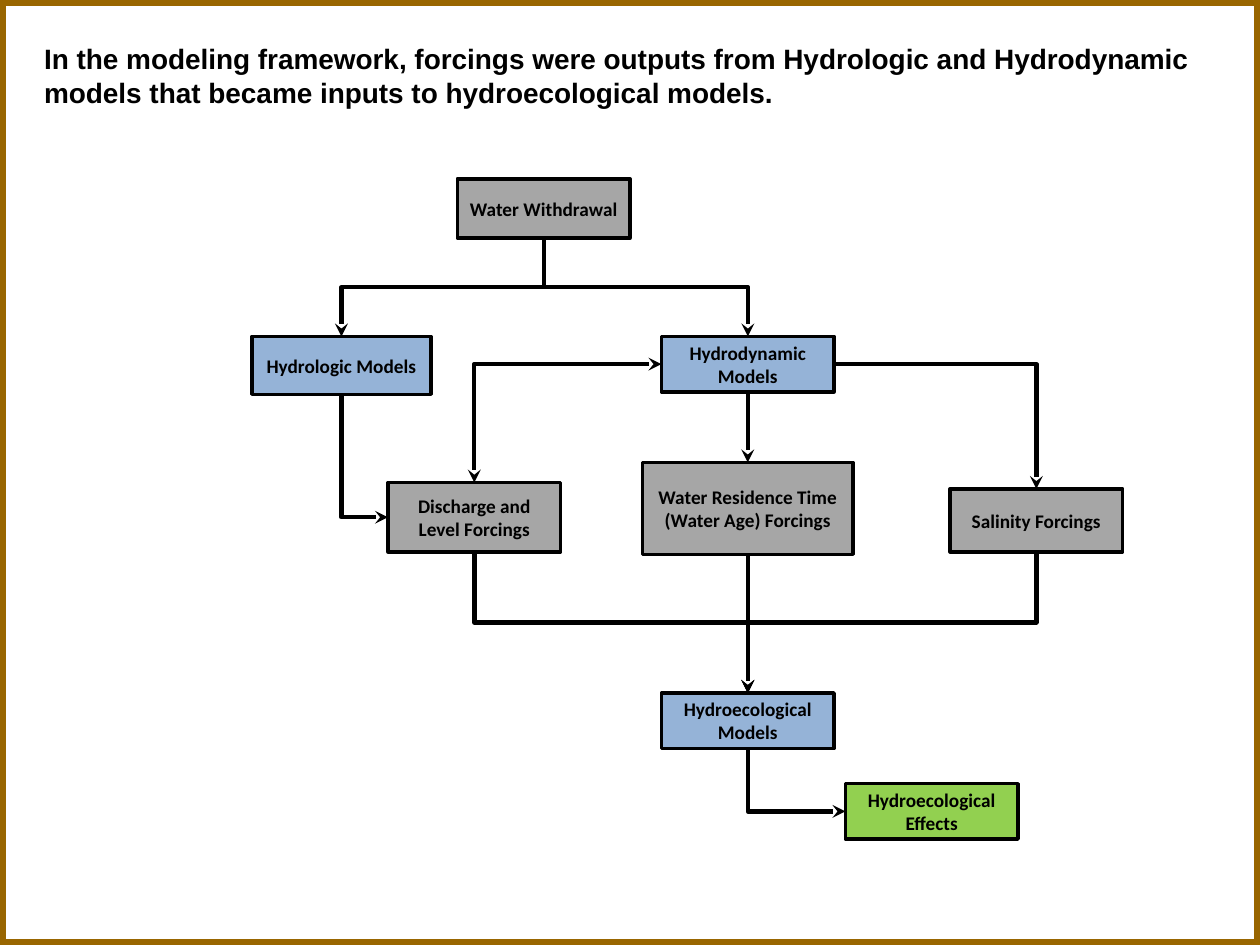
from dataclasses import dataclass

import lxml.etree
import pptx
import pptx.dml.color
import pptx.enum.shapes
import pptx.enum.text
import pptx.oxml.ns
import pptx.shapes.autoshape
import pptx.shapes.connector
import pptx.slide
import pptx.text.text
import pptx.util

Inches = pptx.util.Inches
Connectors = pptx.enum.shapes.MSO_CONNECTOR
Align = pptx.enum.text.PP_ALIGN
Anchor = pptx.enum.text.MSO_ANCHOR
qn = pptx.oxml.ns.qn

COLORS = {
    "ink": "000000",
    "forcing": "A6A6A6",
    "model": "95B3D7",
    "effect": "92D050",
    "frame": "996600",
}
TOP, LEFT, BOTTOM, RIGHT = range(4)


@dataclass(frozen=True)
class Box:
    text: str
    color: str
    left: float
    top: float
    width: float = 1.37
    height: float = 0.44

    def side(self, index: int) -> tuple[float, float]:
        across, down = ((0.5, 0), (0, 0.5), (0.5, 1), (1, 0.5))[index]
        return self.left + across * self.width, self.top + down * self.height


@dataclass(frozen=True)
class Flow:
    source: str
    exit: int
    target: str
    entry: int
    both_ways: bool = False


BOXES = {
    "withdrawal": Box("Water Withdrawal", "forcing", 3.63, 1.42, height=0.47),
    "hydrologic": Box("Hydrologic Models", "model", 2, 2.67, 1.42, 0.46),
    "hydrodynamic": Box("Hydrodynamic Models", "model", 5.25, 2.67),
    "discharge": Box("Discharge and Level Forcings", "forcing", 3.08, 3.83, height=0.55),
    "residence": Box("Water Residence Time (Water Age) Forcings", "forcing", 5.1, 3.67, 1.67, 0.73),
    "salinity": Box("Salinity Forcings", "forcing", 7.54, 3.88, height=0.5),
    "hydroecological": Box("Hydroecological Models", "model", 5.25, 5.5),
    "effects": Box("Hydroecological Effects", "effect", 6.71, 6.22),
}
FLOWS = [
    Flow("withdrawal", BOTTOM, "hydrologic", TOP),
    Flow("withdrawal", BOTTOM, "hydrodynamic", TOP),
    Flow("hydrologic", BOTTOM, "discharge", LEFT),
    Flow("hydrodynamic", LEFT, "discharge", TOP, both_ways=True),
    Flow("hydrodynamic", RIGHT, "salinity", TOP),
    Flow("discharge", BOTTOM, "hydroecological", TOP),
    Flow("salinity", BOTTOM, "hydroecological", TOP),
    Flow("hydroecological", BOTTOM, "effects", LEFT),
]
STRAIGHT_FLOWS = [
    Flow("hydrodynamic", BOTTOM, "residence", TOP),
    Flow("residence", BOTTOM, "hydroecological", TOP),
]


def rgb(name: str) -> pptx.dml.color.RGBColor:
    return pptx.dml.color.RGBColor.from_string(COLORS[name])


def write(frame: pptx.text.text.TextFrame, text: str, *, font: str, size: float,
          align: Align, anchor: Anchor, inset: float) -> None:
    frame.word_wrap = True
    frame.auto_size = pptx.enum.text.MSO_AUTO_SIZE.NONE
    frame.vertical_anchor = anchor
    frame.margin_left = frame.margin_right = Inches(inset)
    frame.margin_top = frame.margin_bottom = Inches(0.05)
    paragraph = frame.paragraphs[0]
    paragraph.alignment = align
    run = paragraph.add_run()
    run.text = text
    run.font.name = font
    run.font.size = pptx.util.Pt(size)
    run.font.bold = True
    run.font.color.rgb = rgb("ink")


def outlined_rectangle(slide: pptx.slide.Slide, left: float, top: float, width: float,
                       height: float, color: str,
                       weight: float) -> pptx.shapes.autoshape.Shape:
    rectangle = slide.shapes.add_shape(
        pptx.enum.shapes.MSO_SHAPE.RECTANGLE,
        Inches(left), Inches(top), Inches(width), Inches(height))
    rectangle.shadow.inherit = False
    rectangle.fill.background()
    rectangle.line.color.rgb = rgb(color)
    rectangle.line.width = pptx.util.Pt(weight)
    return rectangle


def draw_box(slide: pptx.slide.Slide, box: Box) -> pptx.shapes.autoshape.Shape:
    rectangle = outlined_rectangle(slide, box.left, box.top, box.width, box.height, "ink", 2)
    rectangle.fill.solid()
    rectangle.fill.fore_color.rgb = rgb(box.color)
    write(rectangle.text_frame, box.text, font="Calibri", size=11,
          align=Align.CENTER, anchor=Anchor.MIDDLE, inset=0.08)
    return rectangle


def draw_arrow(slide: pptx.slide.Slide, flow: Flow, kind: Connectors,
               begin: tuple[float, float],
               end: tuple[float, float]) -> pptx.shapes.connector.Connector:
    arrow = slide.shapes.add_connector(kind, *map(Inches, begin + end))
    arrow.line.color.rgb = rgb("ink")
    arrow.line.width = pptx.util.Pt(2.5)
    properties = arrow._element.spPr
    for tip in ("a:headEnd", "a:tailEnd") if flow.both_ways else ("a:tailEnd",):
        lxml.etree.SubElement(properties.find(qn("a:ln")), qn(tip), type="stealth")
    lxml.etree.SubElement(properties, qn("a:effectLst"))
    return arrow


def draw_elbow(slide: pptx.slide.Slide, flow: Flow) -> None:
    begin = BOXES[flow.source].side(flow.exit)
    end = BOXES[flow.target].side(flow.entry)
    downward = flow.exit == BOTTOM
    rightward = end[0] > begin[0]
    if downward:
        middle_x, middle_y = (begin[0] + end[0]) / 2, (begin[1] + end[1]) / 2
        half_run = (end[1] - begin[1]) / 2 * (-1 if rightward else 1)
        half_rise = abs(end[0] - begin[0]) / 2
        begin = middle_x - half_run, middle_y - half_rise
        end = middle_x + half_run, middle_y + half_rise
    arrow = draw_arrow(slide, flow, Connectors.ELBOW, begin, end)
    properties = arrow._element.spPr
    if downward:
        properties.find(qn("a:xfrm")).set("rot", str((270 if rightward else 90) * 60000))
    if not (downward and flow.entry == TOP):
        properties.find(qn("a:prstGeom")).set("prst", "bentConnector2")


def main() -> None:
    presentation = pptx.Presentation()
    presentation.slide_width = Inches(10)
    presentation.slide_height = Inches(7.5)
    slide = presentation.slides.add_slide(presentation.slide_layouts[5])

    title = slide.shapes.title
    title.left, title.top = Inches(0.25), Inches(0.28)
    title.width, title.height = Inches(9.33), Inches(0.64)
    write(title.text_frame,
          "In the modeling framework, forcings were outputs from Hydrologic and Hydrodynamic "
          "models that became inputs to hydroecological models.",
          font="Arial", size=16, align=Align.LEFT, anchor=Anchor.TOP, inset=0.1)

    rectangles = {name: draw_box(slide, box) for name, box in BOXES.items()}
    for flow in FLOWS:
        draw_elbow(slide, flow)
    for flow in STRAIGHT_FLOWS:
        arrow = draw_arrow(slide, flow, Connectors.STRAIGHT,
                           BOXES[flow.source].side(flow.exit),
                           BOXES[flow.target].side(flow.entry))
        arrow.begin_connect(rectangles[flow.source], flow.exit)
        arrow.end_connect(rectangles[flow.target], flow.entry)

    outlined_rectangle(slide, 0, 0, 10, 7.5, "frame", 6.5)
    presentation.save("out.pptx")


if __name__ == "__main__":
    main()
